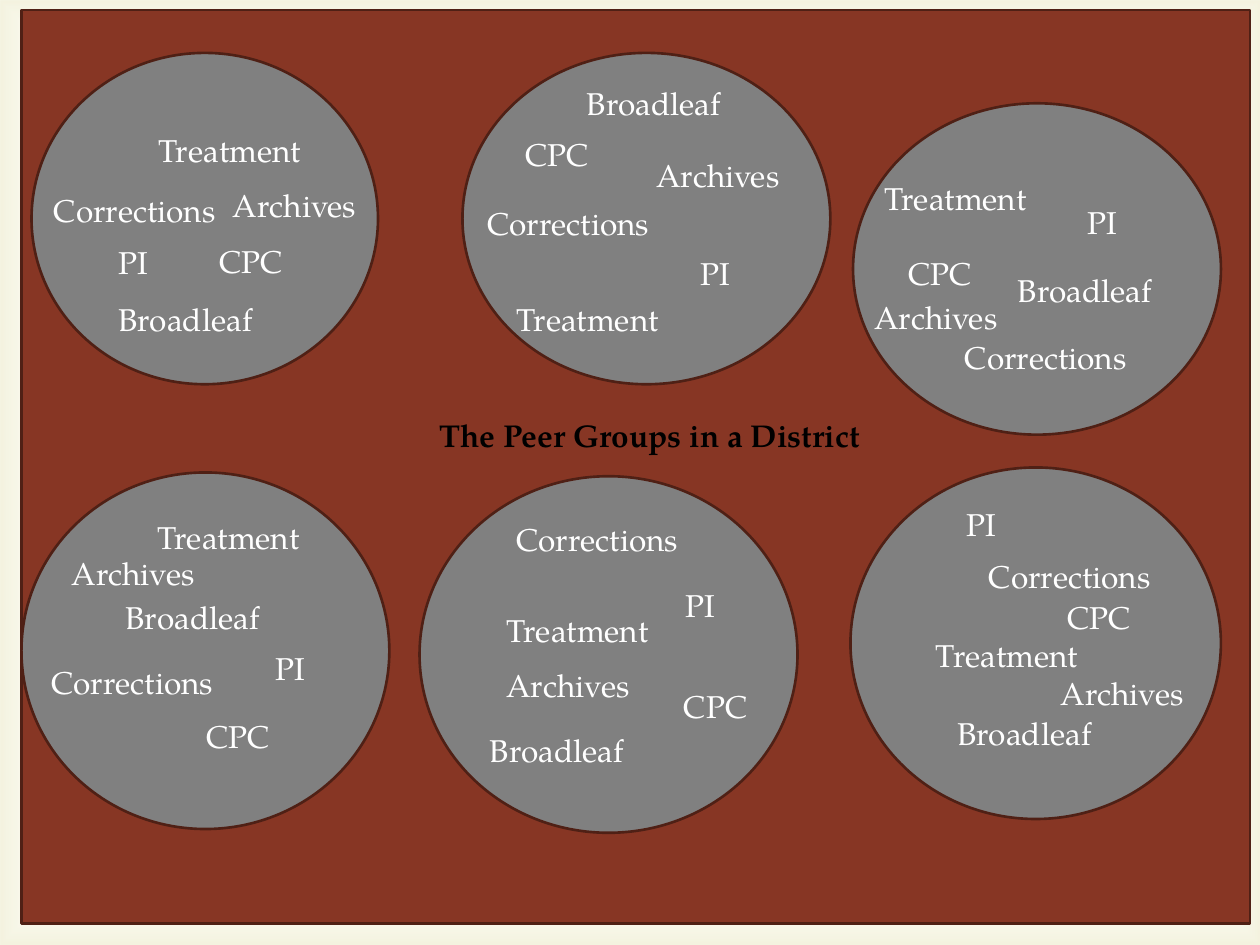
from pptx import Presentation
from pptx.dml.color import RGBColor
from pptx.enum.shapes import MSO_SHAPE
from pptx.enum.text import MSO_ANCHOR, MSO_AUTO_SIZE, PP_ALIGN
from pptx.oxml import parse_xml
from pptx.oxml.ns import nsdecls
from pptx.util import Inches, Pt

FONT = "TeX Gyre Pagella"
WHITE, BLACK, BRICK, DARK, GRAY = "FFFFFF", "000000", "873624", "4F2015", "808080"
LINE_H = 0.4
WIDTHS = {"Treatment": 1.42, "Corrections": 1.56, "Broadleaf": 1.44,
          "CPC": 0.78, "PI": 0.5, "Archives": 1.2}

GROUPS = [
    ((0.25, 0.42, 2.75, 2.63),
     {"Treatment": (1.16, 0.99), "Corrections": (0.33, 1.47), "Broadleaf": (0.84, 2.33),
      "CPC": (1.64, 1.87), "PI": (0.84, 1.88), "Archives": (1.75, 1.43)}),
    ((3.67, 0.42, 2.92, 2.63),
     {"Treatment": (4, 2.33), "Corrections": (3.77, 1.57), "Broadleaf": (4.56, 0.62),
      "CPC": (4.07, 1.02), "PI": (5.46, 1.97), "Archives": (5.11, 1.19)}),
    ((6.77, 0.82, 2.92, 2.63),
     {"Treatment": (6.92, 1.37), "Corrections": (7.56, 2.63), "Broadleaf": (7.98, 2.1),
      "CPC": (7.11, 1.97), "PI": (8.53, 1.56), "Archives": (6.84, 2.32)}),
    ((0.17, 3.75, 2.92, 2.83),
     {"Treatment": (1.15, 4.06), "Corrections": (0.31, 5.21), "Broadleaf": (0.9, 4.7),
      "CPC": (1.54, 5.64), "PI": (2.09, 5.1), "Archives": (0.47, 4.35)}),
    ((3.33, 3.78, 3, 2.83),
     {"Treatment": (3.92, 4.8), "Corrections": (4, 4.08), "Broadleaf": (3.79, 5.75),
      "CPC": (5.33, 5.4), "PI": (5.34, 4.6), "Archives": (3.92, 5.24)}),
    ((6.75, 3.71, 2.94, 2.79),
     {"Treatment": (7.33, 5), "Corrections": (7.75, 4.37), "Broadleaf": (7.5, 5.62),
      "CPC": (8.37, 4.7), "PI": (7.57, 3.96), "Archives": (8.32, 5.3)}),
]


def rgb(value):
    """Return the colour for a hex string."""
    return RGBColor.from_string(value)


def add_panel(s, kind, box, fill):
    """Add a filled, outlined shape without shadow."""
    sp = s.shapes.add_shape(kind, *map(Inches, box))
    sp.shadow.inherit = False
    sp.fill.solid()
    sp.fill.fore_color.rgb = rgb(fill)
    sp.line.color.rgb = rgb(DARK)
    sp.line.width = Pt(1.5)
    return sp


def add_backdrop(s):
    """Add the full-slide rectangle with a pale glow at its edges."""
    sp = add_panel(s, MSO_SHAPE.RECTANGLE, (0, 0, 10, 7.5), WHITE)
    sp.line.fill.background()
    stops = "".join(
        f'<a:gs pos="{pos}000"><a:srgbClr val="{color}">'
        f'<a:alpha val="{alpha}000"/></a:srgbClr></a:gs>'
        for pos, color, alpha in ((83, WHITE, 11), (100, "D1CA75", 23)))
    grad = parse_xml(
        f'<a:gradFill {nsdecls("a")} rotWithShape="1"><a:gsLst>{stops}</a:gsLst>'
        '<a:path path="rect"><a:fillToRect l="50000" t="50000" r="50000" b="50000"/>'
        '</a:path></a:gradFill>')
    solid = sp.element.spPr.find(
        "{http://schemas.openxmlformats.org/drawingml/2006/main}solidFill")
    sp.element.spPr.replace(solid, grad)


def write_line(sp, text, color, bold=False):
    """Write one unwrapped, left-aligned line into a shape."""
    tf = sp.text_frame
    tf.word_wrap = False
    tf.auto_size = MSO_AUTO_SIZE.SHAPE_TO_FIT_TEXT
    tf.vertical_anchor = MSO_ANCHOR.TOP
    p = tf.paragraphs[0]
    p.alignment = PP_ALIGN.LEFT
    r = p.add_run()
    r.text = text
    r.font.name = FONT
    r.font.size = Pt(18)
    r.font.bold = bold
    r.font.color.rgb = rgb(color)


def add_label(s, text, left, top):
    """Add a white committee name."""
    box = (left, top, WIDTHS[text], LINE_H)
    write_line(s.shapes.add_textbox(*map(Inches, box)), text, WHITE)


def add_title(s, text):
    """Place the title between the rows, in front of the panels."""
    sp = s.shapes.title
    sp.left, sp.top, sp.width, sp.height = map(Inches, (3.39, 3.25, 3.59, LINE_H))
    write_line(sp, text, BLACK, bold=True)
    sp.element.getparent().append(sp.element)


def main():
    """Build and save the slide."""
    prs = Presentation()
    prs.slide_width, prs.slide_height = Inches(10), Inches(7.5)
    s = prs.slides.add_slide(prs.slide_layouts[5])
    add_backdrop(s)
    add_panel(s, MSO_SHAPE.RECTANGLE, (0.17, 0.08, 9.75, 7.25), BRICK)
    for box, _ in GROUPS:
        add_panel(s, MSO_SHAPE.OVAL, box, GRAY)
    for text in WIDTHS:
        for _, places in GROUPS:
            add_label(s, text, *places[text])
    add_title(s, "The Peer Groups in a District")
    prs.save("out.pptx")


if __name__ == "__main__":
    main()
